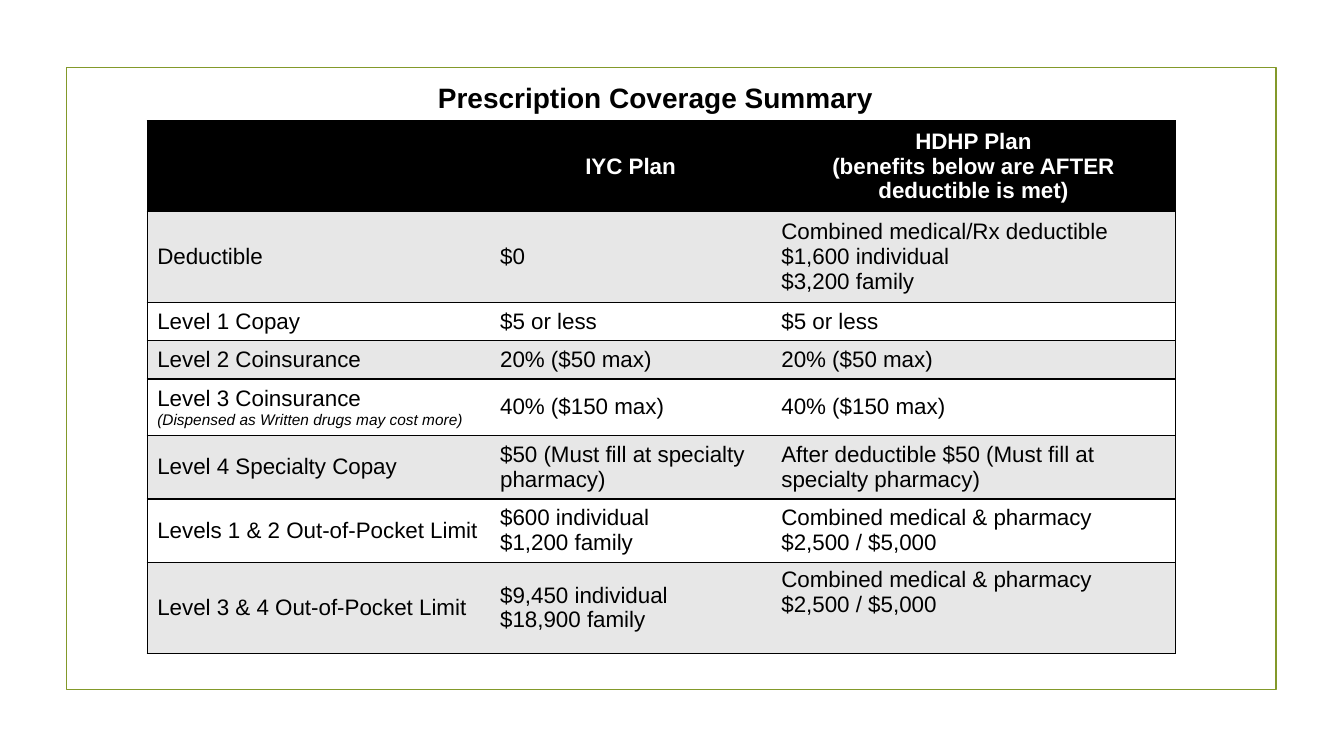
from dataclasses import dataclass

from lxml.etree import SubElement
from pptx import Presentation
from pptx.dml.color import RGBColor
from pptx.enum.shapes import MSO_SHAPE
from pptx.enum.text import MSO_ANCHOR, PP_ALIGN
from pptx.oxml.ns import qn
from pptx.util import Inches, Pt


@dataclass(frozen=True)
class Theme:
    font: str = "Arial"
    black: str = "000000"
    white: str = "FFFFFF"
    band: str = "E7E7E7"
    frame: str = "83992A"
    title_size: int = 20
    body_size: int = 16
    note_size: int = 11


THEME = Theme()

# Table content: one tuple per row, one line of text per paragraph
DISPENSING_NOTE = "(Dispensed as Written drugs may cost more)"
COMBINED_LIMIT = "Combined medical & pharmacy\n$2,500 / $5,000"
COVERAGE = [
    ("", "IYC Plan", "HDHP Plan\n(benefits below are AFTER deductible is met)"),
    ("Deductible", "$0",
     "Combined medical/Rx deductible\n$1,600 individual\n$3,200 family"),
    ("Level 1 Copay", "$5 or less", "$5 or less"),
    ("Level 2 Coinsurance", "20% ($50 max)", "20% ($50 max)"),
    (f"Level 3 Coinsurance\n{DISPENSING_NOTE}", "40% ($150 max)", "40% ($150 max)"),
    ("Level 4 Specialty Copay", "$50 (Must fill at specialty pharmacy)",
     "After deductible $50 (Must fill at specialty pharmacy)"),
    ("Levels 1 & 2 Out-of-Pocket Limit", "$600 individual\n$1,200 family",
     COMBINED_LIMIT),
    ("Level 3 & 4 Out-of-Pocket Limit", "$9,450 individual\n$18,900 family",
     COMBINED_LIMIT),
]
COLUMN_WIDTHS = [3.4, 2.79, 4.01]
ROW_HEIGHTS = [0.9, 0.9, 0.38, 0.38, 0.56, 0.63, 0.63, 0.9]


def style_paragraph(paragraph, size, color, bold=False, italic=False, centered=False):
    paragraph.alignment = PP_ALIGN.CENTER if centered else PP_ALIGN.LEFT
    font = paragraph.font
    font.name = THEME.font
    font.size = Pt(size)
    font.bold = bold
    font.italic = italic
    font.color.rgb = RGBColor.from_string(color)


def add_frame(slide):
    frame = slide.shapes.add_shape(
        MSO_SHAPE.RECTANGLE, Inches(0.66), Inches(0.67), Inches(12), Inches(6.17))
    frame.shadow.inherit = False
    frame.fill.background()
    frame.line.color.rgb = RGBColor.from_string(THEME.frame)
    frame.line.width = Pt(1.25)


def add_title(slide, text):
    title = slide.shapes.add_textbox(
        Inches(1.24), Inches(0.75), Inches(10.52), Inches(0.44)).text_frame
    title.word_wrap = True
    title.text = text
    style_paragraph(title.paragraphs[0], THEME.title_size, THEME.black,
                    bold=True, centered=True)


def set_borders(cell, visible_sides):
    """Draw the given sides in black and clear the others."""
    properties = cell._tc.get_or_add_tcPr()
    for side in "LRTB":
        border = SubElement(properties, qn(f"a:ln{side}"), w=str(Pt(1)))
        if side in visible_sides:
            fill = SubElement(border, qn("a:solidFill"))
            SubElement(fill, qn("a:srgbClr"), val=THEME.black)
        else:
            SubElement(border, qn("a:noFill"))


def fill_cell(cell, text, background, is_header):
    cell.fill.solid()
    cell.fill.fore_color.rgb = RGBColor.from_string(background)
    cell.vertical_anchor = MSO_ANCHOR.MIDDLE
    cell.text = text
    for paragraph in cell.text_frame.paragraphs:
        is_note = paragraph.text == DISPENSING_NOTE
        style_paragraph(
            paragraph,
            THEME.note_size if is_note else THEME.body_size,
            THEME.white if is_header else THEME.black,
            bold=is_header, italic=is_note, centered=is_header)


def add_coverage_table(slide):
    table = slide.shapes.add_table(
        len(COVERAGE), len(COLUMN_WIDTHS), Inches(1.46), Inches(1.2),
        Inches(sum(COLUMN_WIDTHS)), Inches(sum(ROW_HEIGHTS))).table
    for column, width in zip(table.columns, COLUMN_WIDTHS):
        column.width = Inches(width)
    outer_sides = {0: "L", len(COLUMN_WIDTHS) - 1: "R"}
    for row_index, (texts, height) in enumerate(zip(COVERAGE, ROW_HEIGHTS)):
        table.rows[row_index].height = Inches(height)
        is_header = row_index == 0
        band = THEME.band if row_index % 2 else THEME.white
        for column_index, text in enumerate(texts):
            cell = table.cell(row_index, column_index)
            set_borders(cell, "TB" + outer_sides.get(column_index, ""))
            fill_cell(cell, text, THEME.black if is_header else band, is_header)
    # The last limit sits at the top of its taller row
    table.cell(len(COVERAGE) - 1, 2).vertical_anchor = MSO_ANCHOR.TOP


def main():
    presentation = Presentation()
    presentation.slide_width = Inches(13.33)
    presentation.slide_height = Inches(7.5)
    slide = presentation.slides.add_slide(presentation.slide_layouts[6])
    add_frame(slide)
    add_coverage_table(slide)
    add_title(slide, "Prescription Coverage Summary")
    presentation.save("out.pptx")


if __name__ == "__main__":
    main()
